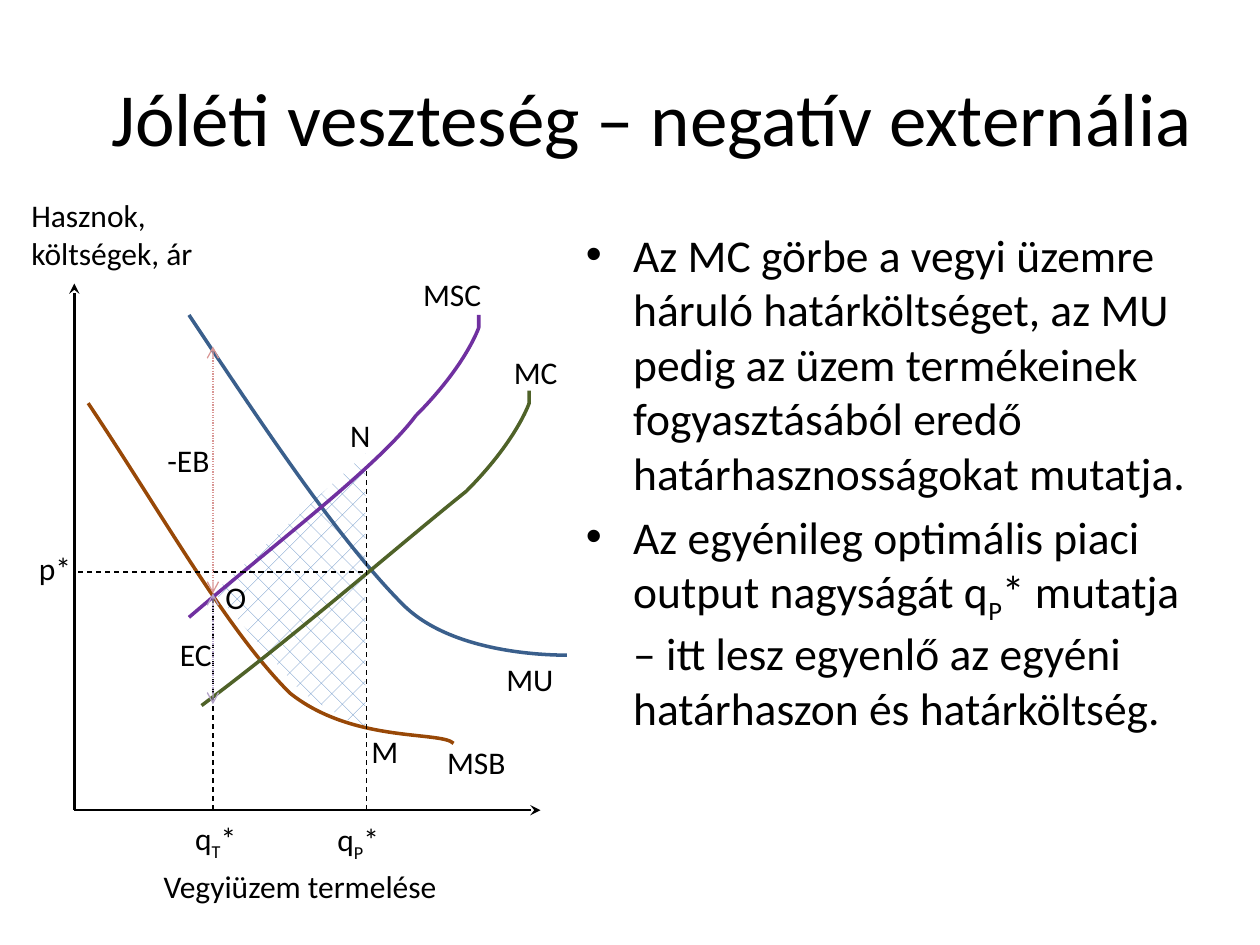
from lxml.etree import SubElement
from pptx import Presentation
from pptx.dml.color import RGBColor
from pptx.enum.dml import MSO_LINE_DASH_STYLE as DASH, MSO_PATTERN_TYPE as PATTERN
from pptx.enum.shapes import MSO_CONNECTOR
from pptx.enum.text import MSO_ANCHOR, MSO_AUTO_SIZE, PP_ALIGN
from pptx.oxml.ns import qn
from pptx.util import Inches, Pt

# The slide is a grid of 100 columns by 75 rows.
COLS, ROWS = 100, 75
CELL = Inches(0.1)
FONT = "Calibri"
COLORS = {
    "text": "000000", "paper": "FFFFFF", "hatch": "4F81BD",
    "mu": "3A5F8C", "msb": "984807", "mc": "4F6228", "msc": "7030A0",
    "benefit": "D99694", "cost": "B3A2C7",
}

# Chart landmarks, in cells
ORIGIN_X, ORIGIN_Y = 5.9, 64.3
Q_SOCIAL, Q_PRIVATE = 16.9, 29.1
PRICE_Y, OPTIMUM_Y = 45.4, 47.1

# Each curve: start, two triples of Bezier points, then straight points
MU = [(15.3, 25), (20.9, 34.1), (26.6, 43.2), (31.5, 47.7),
      (36.4, 52.2), (43.5, 51.6), (44.6, 52)]
MSB = [(x - 8.15, y + 6.9) for x, y in MU]
MC = [(15.6, 56.5), (24, 49.8), (32.3, 43.2), (36.6, 39.2),
      (40.9, 35.2), (41.7, 32.5), (41.7, 32.5), (42, 31)]
MSC = [(14.8, 49.2), (22.1, 42.9), (29.5, 36.6), (33.3, 32.8),
       (37.1, 29), (37.8, 26.4), (37.8, 26.4), (38.1, 25)]
WELFARE_LOSS = [(29.2, 36.5), (17.1, 47.1), (23.8, 55.1), (29.4, 57.8)]

# Labels: text, left, top, width, height; _x_ marks a subscript
LABELS = [
    ("Hasznok, költségek, ár", 1.5, 15.1, 21.5, 7.1),
    ("Vegyiüzem termelése", 12, 68.3, 25.7, 4),
    ("MU", 39.2, 51.9, 11, 4),
    ("MSB", 34.5, 58.5, 11, 4),
    ("MSC", 32.6, 21.3, 11, 4),
    ("MC", 39.8, 27.5, 11, 4),
    ("q_T_*", 14.5, 64.5, 6.6, 4),
    ("q_P_*", 25.8, 64.6, 6.6, 4),
    ("p*", 2.1, 43.1, 7.1, 4),
    ("N", 26.8, 32.5, 4.7, 4),
    ("M", 28.5, 57.6, 4.7, 4),
    ("O", 16.9, 45.4, 4.7, 4),
    ("-EB", 12.3, 34.5, 5.6, 4),
    ("EC", 13.3, 49.9, 5.6, 4),
]
BULLETS = [
    "Az MC görbe a vegyi üzemre háruló határköltséget, az MU pedig az üzem "
    "termékeinek fogyasztásából eredő határhasznosságokat mutatja.",
    "Az egyénileg optimális piaci output nagyságát q_P_* mutatja – itt lesz "
    "egyenlő az egyéni határhaszon és határköltség.",
]


def cells(*values):
    return [round(v * CELL) for v in values]


def rgb(name):
    return RGBColor.from_string(COLORS[name])


def place(s, *box):
    s.left, s.top, s.width, s.height = cells(*box)


def write(p, text, size):
    """Fill a paragraph, lowering the parts between underscores."""
    for i, part in enumerate(text.split("_")):
        r = p.add_run()
        r.text = part
        r.font.name, r.font.size = FONT, Pt(size)
        r.font.color.rgb = rgb("text")
        if i % 2:
            r._r.get_or_add_rPr().set("baseline", "-25000")


def add_label(slide, text, *box):
    tf = slide.shapes.add_textbox(*cells(*box)).text_frame
    tf.word_wrap = True
    tf.auto_size = MSO_AUTO_SIZE.SHAPE_TO_FIT_TEXT
    write(tf.paragraphs[0], text, 18)


def add_outline(slide, points, close):
    builder = slide.shapes.build_freeform(*points[0], scale=CELL)
    builder.add_line_segments(points[1:], close=close)
    s = builder.convert_to_shape()
    s.shadow.inherit = False
    return s


def add_welfare_loss(slide):
    s = add_outline(slide, WELFARE_LOSS, True)
    s.fill.patterned()
    s.fill.pattern = PATTERN.DOTTED_DIAMOND
    s.fill.fore_color.rgb, s.fill.back_color.rgb = rgb("hatch"), rgb("paper")
    s.line.fill.background()


def add_curve(slide, points, color):
    s = add_outline(slide, points, False)
    s.fill.background()
    s.line.color.rgb, s.line.width = rgb(color), Pt(2)
    segments = list(s._element.iter(qn("a:lnTo")))
    for i in (0, 3):  # merge three straight segments into one Bezier segment
        first, *others = segments[i:i + 3]
        first.tag = qn("a:cubicBezTo")
        for segment in others:
            first.append(segment[0])
            segment.getparent().remove(segment)


def add_line(slide, start, end, color="text", width=0.75, dash=None, **arrows):
    """Draw a line; arrows maps headEnd (start) and tailEnd (end) to a type."""
    s = slide.shapes.add_connector(MSO_CONNECTOR.STRAIGHT, *cells(*start, *end))
    s.line.color.rgb, s.line.width = rgb(color), Pt(width)
    if dash:
        s.line.dash_style = dash
    for tag, kind in arrows.items():
        SubElement(s.line._get_or_add_ln(), qn(f"a:{tag}"), type=kind)
    SubElement(s._element.spPr, qn("a:effectLst"))


def add_title(slide):
    s = slide.shapes.title
    place(s, 6.7, 1.3, 90, 15.9)
    tf = s.text_frame
    tf.auto_size, tf.vertical_anchor = MSO_AUTO_SIZE.NONE, MSO_ANCHOR.MIDDLE
    tf.paragraphs[0].alignment = PP_ALIGN.CENTER
    write(tf.paragraphs[0], "Jóléti veszteség – negatív externália", 42.9)


def add_bullets(slide):
    s = slide.placeholders[1]
    place(s, 45.5, 17.5, 50.1, 54.8)
    tf = s.text_frame
    tf.auto_size = MSO_AUTO_SIZE.NONE
    for i, text in enumerate(BULLETS):
        write(tf.add_paragraph() if i else tf.paragraphs[0], text, 26)


def add_chart_lines(slide):
    origin = (ORIGIN_X, ORIGIN_Y)
    for end in ((ORIGIN_X, 22.5), (42.9, ORIGIN_Y)):
        add_line(slide, origin, end, width=1.5, tailEnd="stealth")
    for start, end in (
        ((28.8, PRICE_Y), (ORIGIN_X, PRICE_Y)),
        ((Q_PRIVATE, ORIGIN_Y), (Q_PRIVATE, 37.1)),
        ((Q_SOCIAL, ORIGIN_Y), (Q_SOCIAL, 47.5)),
    ):
        add_line(slide, start, end, dash=DASH.DASH)
    for top, bottom, color in ((27.5, OPTIMUM_Y, "benefit"),
                               (OPTIMUM_Y, 55.9, "cost")):
        add_line(slide, (Q_SOCIAL, top), (Q_SOCIAL, bottom), color,
                 dash=DASH.ROUND_DOT, headEnd="arrow", tailEnd="arrow")


def main():
    prs = Presentation()
    prs.slide_width, prs.slide_height = cells(COLS, ROWS)
    slide = prs.slides.add_slide(prs.slide_layouts[1])
    add_title(slide)
    add_bullets(slide)
    add_welfare_loss(slide)
    for points, color in ((MU, "mu"), (MSB, "msb"), (MC, "mc"), (MSC, "msc")):
        add_curve(slide, points, color)
    add_chart_lines(slide)
    for label in LABELS:
        add_label(slide, *label)
    prs.save("out.pptx")


if __name__ == "__main__":
    main()
